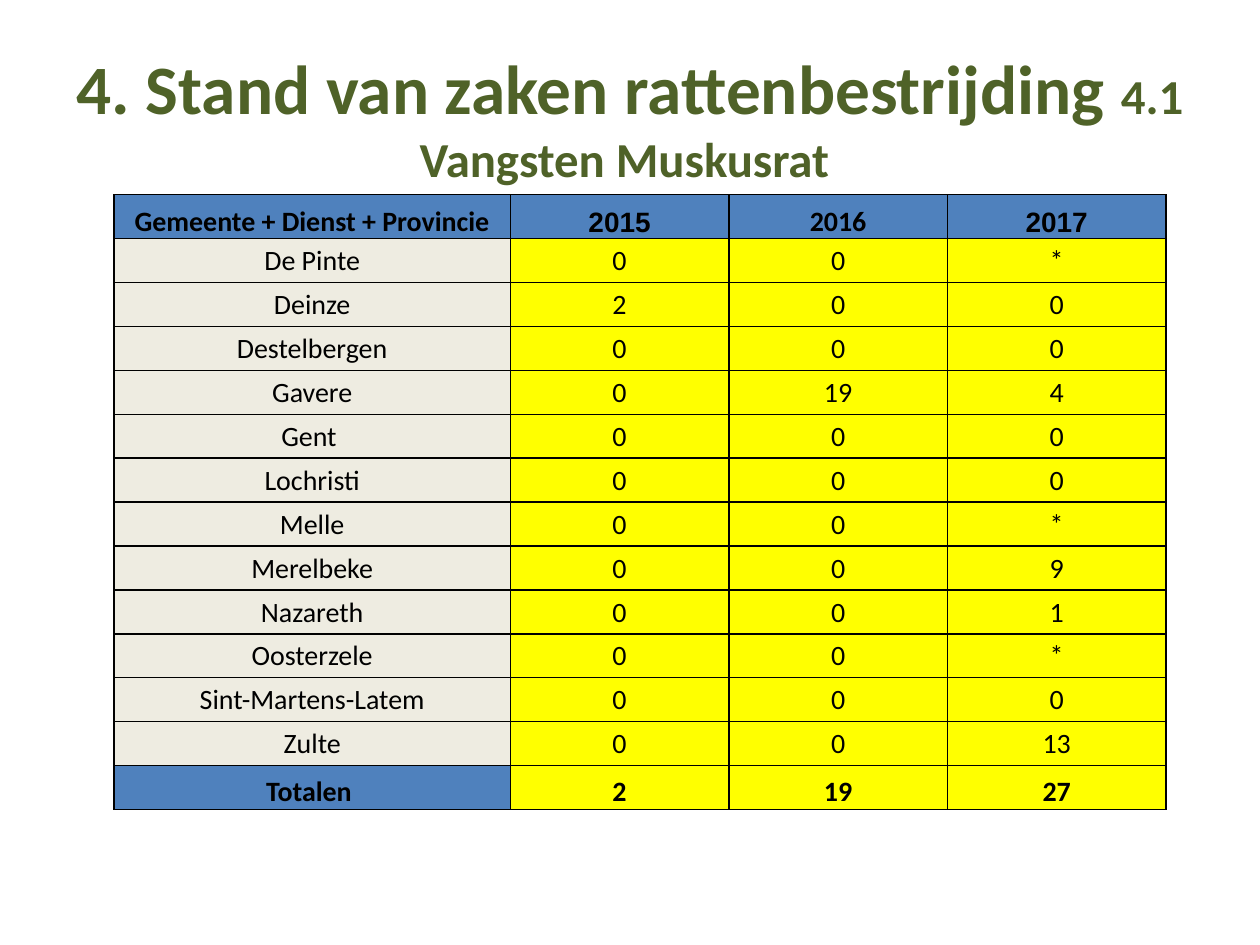
"""Build the slide with the muskrat catches per municipality."""
from dataclasses import dataclass

from lxml.etree import SubElement
from pptx import Presentation
from pptx.dml.color import RGBColor as Color
from pptx.enum.text import MSO_ANCHOR as Anchor, MSO_AUTO_SIZE as AutoSize, PP_ALIGN as Align
from pptx.oxml.ns import qn
from pptx.util import Pt

TITLE = "4. Stand van zaken rattenbestrijding "
SUBTITLE = "4.1 Vangsten Muskusrat "
CATCHES = [
    ("Gemeente\u00a0+ Dienst + Provincie", "2015", "2016", "2017"),
    ("De Pinte", "0", "0", "*"),
    ("Deinze", "2", "0", "0"),
    ("Destelbergen", "0", "0", "0"),
    ("Gavere", "0", "19", "4"),
    ("Gent ", "0", "0", "0"),
    ("Lochristi", "0", "0", "0"),
    ("Melle", "0", "0", "*"),
    ("Merelbeke", "0", "0", "9"),
    ("Nazareth", "0", "0", "1"),
    ("Oosterzele", "0", "0", "*"),
    ("Sint-Martens-Latem", "0", "0", "0"),
    ("Zulte", "0", "0", "13"),
    ("Totalen ", "2", "19", "27"),
]
COLUMN_WIDTHS = (226.4, 124.9, 124.9, 124.9)
ROW_HEIGHT = 25.1
TABLE_LEFT, TABLE_TOP = 65.2, 111.3
ARIAL_HEADINGS = ("2015", "2017")


@dataclass(frozen=True)
class Theme:
    """Colours, fonts and type sizes of the slide."""
    title: str = "4F6228"
    ink: str = "000000"
    heading: str = "4F81BD"
    label: str = "EEECE1"
    value: str = "FFFF00"
    font: str = "Calibri"
    year_font: str = "Arial"
    title_size: float = 39.6
    subtitle_size: float = 27.9
    table_size: float = 16


THEME = Theme()


def format_run(run, size, color, bold, font=THEME.font):
    """Apply the type style to a run."""
    run.font.name = font
    run.font.size = Pt(size)
    run.font.bold = bold
    run.font.color.rgb = Color.from_string(color)


def add_title(slide):
    """Fill the title placeholder with its large and small part."""
    title = slide.shapes.title
    title.left, title.top, title.width, title.height = Pt(36), Pt(21.6), Pt(648), Pt(90)
    frame = title.text_frame
    frame.word_wrap = True
    frame.auto_size = AutoSize.NONE
    frame.vertical_anchor = Anchor.MIDDLE
    paragraph = frame.paragraphs[0]
    paragraph.alignment = Align.CENTER
    for text, size in ((TITLE, THEME.title_size), (SUBTITLE, THEME.subtitle_size)):
        run = paragraph.add_run()
        run.text = text
        format_run(run, size, THEME.title, True)


def add_borders(cell):
    """Draw a thin line on all four sides of a cell."""
    properties = cell._tc.get_or_add_tcPr()
    for side in ("lnL", "lnR", "lnT", "lnB"):
        line = SubElement(properties, qn(f"a:{side}"), w=str(Pt(1)))
        fill = SubElement(line, qn("a:solidFill"))
        SubElement(fill, qn("a:srgbClr"), val=THEME.ink)


def fill_cell(cell, text, row, column):
    """Write and style one cell according to its place in the table."""
    is_header, is_total = row == 0, row == len(CATCHES) - 1
    is_strong = is_header or is_total
    if is_header or (is_total and column == 0):
        color = THEME.heading
    else:
        color = THEME.value if column else THEME.label
    add_borders(cell)
    cell.fill.solid()
    cell.fill.fore_color.rgb = Color.from_string(color)
    cell.margin_left = cell.margin_right = cell.margin_top = Pt(0.7)
    cell.margin_bottom = Pt(0)
    cell.vertical_anchor = Anchor.BOTTOM if is_strong else Anchor.MIDDLE
    cell.text = text
    paragraph = cell.text_frame.paragraphs[0]
    paragraph.alignment = Align.CENTER
    font = THEME.year_font if is_header and text in ARIAL_HEADINGS else THEME.font
    format_run(paragraph.runs[0], THEME.table_size, THEME.ink, is_strong, font)


def add_catches_table(slide):
    """Add the table of catches."""
    table = slide.shapes.add_table(
        len(CATCHES), len(COLUMN_WIDTHS), Pt(TABLE_LEFT), Pt(TABLE_TOP),
        Pt(sum(COLUMN_WIDTHS)), Pt(ROW_HEIGHT * len(CATCHES))).table
    for column, width in zip(table.columns, COLUMN_WIDTHS):
        column.width = Pt(width)
    for row, texts in enumerate(CATCHES):
        table.rows[row].height = Pt(ROW_HEIGHT)
        for column, text in enumerate(texts):
            fill_cell(table.cell(row, column), text, row, column)


def main():
    """Create and save the presentation."""
    presentation = Presentation()
    presentation.slide_width, presentation.slide_height = Pt(720), Pt(540)
    slide = presentation.slides.add_slide(presentation.slide_layouts.get_by_name("Title Only"))
    add_title(slide)
    add_catches_table(slide)
    presentation.save("out.pptx")


if __name__ == "__main__":
    main()
